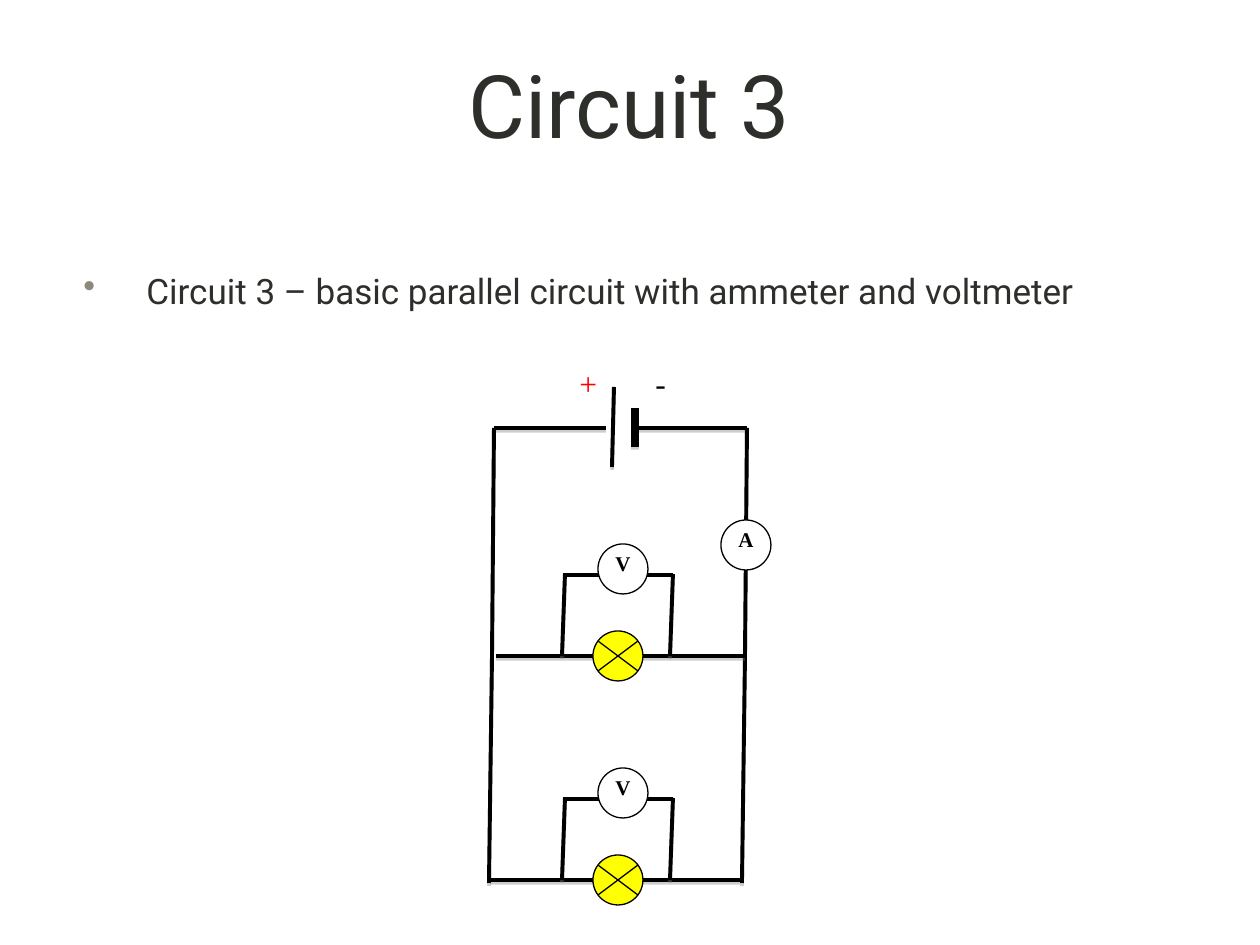
from lxml.etree import SubElement
from pptx import Presentation
from pptx.dml.color import RGBColor
from pptx.enum.shapes import MSO_CONNECTOR, MSO_SHAPE
from pptx.enum.text import MSO_ANCHOR, PP_ALIGN
from pptx.oxml.ns import qn
from pptx.util import Emu, Pt

EMU_PER_PX = 914400 / 126
INK = RGBColor(0x2D, 0x2F, 0x2B)
BLACK = RGBColor(0, 0, 0)
WHITE = RGBColor(255, 255, 255)
YELLOW = RGBColor(255, 255, 0)
RED = RGBColor(255, 0, 0)
BULLET_COLOUR = "8E887C"
SHADOW_COLOUR = "808080"
SYMBOL_SIZE = 50
SYMBOL_FONT = "Times New Roman"


def px(length):
    """Convert pixels to EMU."""
    return Emu(round(length * EMU_PER_PX))


def add_text(slide, box, text, size, font, colour, align=PP_ALIGN.LEFT, bold=False, wrap=True):
    """Add a one-paragraph text box and return its shape."""
    shape = slide.shapes.add_textbox(*map(px, box))
    shape.text_frame.word_wrap = wrap
    paragraph = shape.text_frame.paragraphs[0]
    paragraph.text = text
    paragraph.alignment = align
    run_font = paragraph.runs[0].font
    run_font.size, run_font.name, run_font.bold = Pt(size), font, bold
    run_font.color.rgb = colour
    return shape


def add_bullet(paragraph):
    """Give a paragraph a hanging coloured bullet."""
    properties = paragraph._p.get_or_add_pPr()
    properties.set("marL", "457200")
    properties.set("indent", "-457200")
    paragraph.space_before = Pt(20)
    colour = SubElement(properties, qn("a:buClr"))
    SubElement(colour, qn("a:srgbClr"), val=BULLET_COLOUR)
    SubElement(properties, qn("a:buChar"), char="•")


def add_line(slide, start, end, width=2.25, shadow=True):
    """Draw a straight black line, with a soft drop shadow if wanted."""
    points = map(px, (*start, *end))
    line = slide.shapes.add_connector(MSO_CONNECTOR.STRAIGHT, *points)
    line.line.color.rgb = BLACK
    line.line.width = Pt(width)
    effects = SubElement(line._element.spPr, qn("a:effectLst"))
    if shadow:
        outer = SubElement(effects, qn("a:outerShdw"), blurRad="0", dist="20320",
                           dir="5400000", rotWithShape="0")
        colour = SubElement(outer, qn("a:srgbClr"), val=SHADOW_COLOUR)
        SubElement(colour, qn("a:alpha"), val="38000")


def add_circle(slide, left, top, colour):
    """Draw the round body of a meter or lamp."""
    circle = slide.shapes.add_shape(
        MSO_SHAPE.OVAL, *map(px, (left, top, SYMBOL_SIZE, SYMBOL_SIZE)))
    circle.shadow.inherit = False
    circle.fill.solid()
    circle.fill.fore_color.rgb = colour
    circle.line.color.rgb = BLACK
    circle.line.width = Pt(0.75)


def add_meter(slide, left, top, letter):
    """Draw a meter with its letter."""
    add_circle(slide, left, top, WHITE)
    add_text(slide, (left, top, SYMBOL_SIZE, 38), letter, 12, SYMBOL_FONT, BLACK,
             PP_ALIGN.CENTER, bold=True)


def add_lamp(slide, left, y):
    """Draw a lamp centred on a wire at height y."""
    add_circle(slide, left, y - SYMBOL_SIZE // 2, YELLOW)
    for rise in (-15, 15):
        add_line(slide, (left + 5, y + rise), (left + 45, y - rise), 0.75, shadow=False)


def add_branch(slide, y, shift):
    """Draw a lamp branch at height y with a voltmeter across the lamp."""
    meter_y = y - 81
    for start, end in ((563, 624), (643, 673)):
        add_line(slide, (start, meter_y), (end, meter_y), shadow=False)
    for start, end in ((745, 643), (598, 496)):
        add_line(slide, (start + shift, y), (end + shift, y))
    for top_x, bottom_x in ((565, 562), (673, 670)):
        add_line(slide, (top_x, meter_y - 1), (bottom_x, y))
    add_meter(slide, 598, y - 112, "V")
    add_lamp(slide, 593, y)


def add_cell(slide):
    """Draw the cell plates, their signs and the top wire."""
    add_line(slide, (747, 428), (635, 428))
    add_line(slide, (606, 428), (494, 428))
    add_line(slide, (614, 387), (612, 467))
    add_line(slide, (635, 408), (635, 447), 4.5)
    add_text(slide, (567, 358, 42, 50), "+", 18, SYMBOL_FONT, RED, wrap=False)
    add_text(slide, (643, 358, 32, 50), "-", 18, SYMBOL_FONT, BLACK, wrap=False)


def add_side(slide, x):
    """Draw one slightly slanted side wire in two lengths."""
    add_line(slide, (x, 428), (x - 2, 656))
    add_line(slide, (x - 2, 656), (x - 5, 883))


def main():
    """Build the slide and save it."""
    presentation = Presentation()
    presentation.slide_width, presentation.slide_height = px(1260), px(945)
    slide = presentation.slides.add_slide(presentation.slide_layouts[6])
    title = add_text(slide, (94, 9, 1071, 189), "Circuit 3", 50, "Roboto", INK, PP_ALIGN.CENTER)
    title.text_frame.vertical_anchor = MSO_ANCHOR.MIDDLE
    body = add_text(slide, (71, 263, 1071, 94),
                    "Circuit 3 – basic parallel circuit with ammeter and voltmeter",
                    20, "Roboto", INK)
    add_bullet(body.text_frame.paragraphs[0])
    add_cell(slide)
    for x in (494, 747):
        add_side(slide, x)
    for y, shift in ((656, 0), (880, -5)):
        add_branch(slide, y, shift)
    add_meter(slide, 721, 520, "A")
    presentation.save("out.pptx")


if __name__ == "__main__":
    main()
